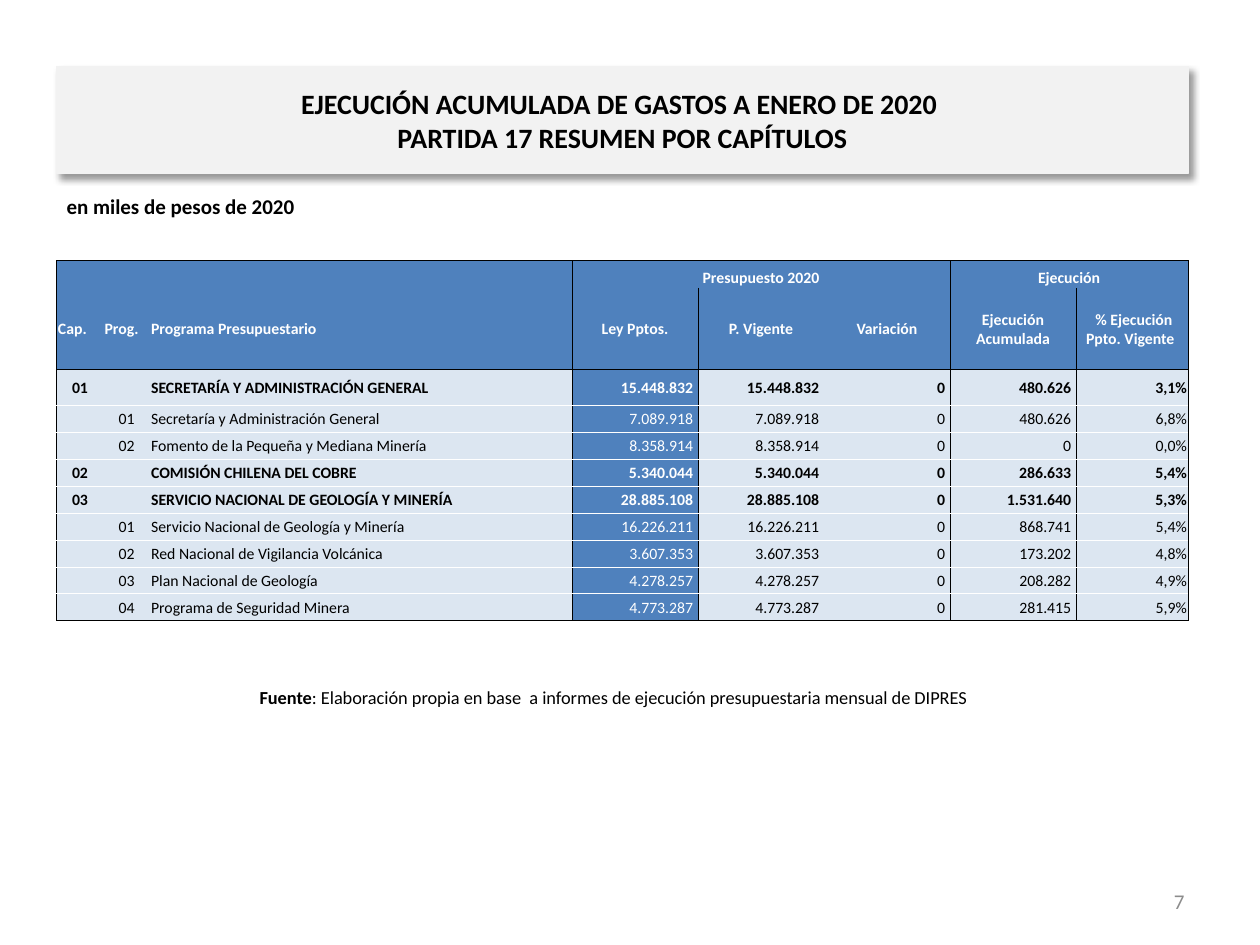
from lxml.etree import SubElement
from pptx import Presentation
from pptx.dml.color import RGBColor
from pptx.enum.text import MSO_ANCHOR as Anchor, MSO_AUTO_SIZE as AutoSize, PP_ALIGN as Align
from pptx.oxml.ns import qn
from pptx.util import Inches, Pt

COLORS = {
    "black": "000000",
    "white": "FFFFFF",
    "panel": "F2F2F2",
    "header": "4F81BD",
    "body": "DCE6F1",
    "page_number": "8C8C8C",
}
PLAIN_TABLE = "{2D5ABB26-0587-4C30-8999-92F81FD0307C}"
COLUMN_WIDTHS = [0.37, 0.37, 3.35, 1, 1, 1, 1, 0.89]
TABLE_HEIGHT, LABEL_HEIGHT, FIRST_HEIGHT = 2.86, 0.65, 0.28
GROUP_STARTS, GROUP_ENDS = (0, 3, 6), (2, 5, 7)
SPANS = {(0, 3): 3, (0, 6): 2}
HEADER = [
    ["", "", "", "Presupuesto 2020", "", "", "Ejecución", ""],
    ["Cap.", "Prog.", "Programa Presupuestario", "Ley Pptos.", "P. Vigente",
     "Variación", "Ejecución Acumulada", " % Ejecución Ppto. Vigente "],
]
PROGRAMS = [
    ("01", "", "SECRETARÍA Y ADMINISTRACIÓN GENERAL", "15.448.832", "480.626", "3,1%"),
    ("", "01", "Secretaría y Administración General", "7.089.918", "480.626", "6,8%"),
    ("", "02", "Fomento de la Pequeña y Mediana Minería", "8.358.914", "0", "0,0%"),
    ("02", "", "COMISIÓN CHILENA DEL COBRE", "5.340.044", "286.633", "5,4%"),
    ("03", "", "SERVICIO NACIONAL DE GEOLOGÍA Y MINERÍA", "28.885.108", "1.531.640", "5,3%"),
    ("", "01", "Servicio Nacional de Geología y Minería", "16.226.211", "868.741", "5,4%"),
    ("", "02", "Red Nacional de Vigilancia Volcánica", "3.607.353", "173.202", "4,8%"),
    ("", "03", "Plan Nacional de Geología", "4.278.257", "208.282", "4,9%"),
    ("", "04", "Programa de Seguridad Minera", "4.773.287", "281.415", "5,9%"),
]


def rgb(name):
    return RGBColor.from_string(COLORS[name])


def apply(target, values):
    for name, value in values.items():
        setattr(target, name, value)


def format_span(span, size, color="black", bold=False):
    apply(span.font, {"name": "Calibri", "size": Pt(size), "bold": bold})
    span.font.color.rgb = rgb(color)


def place(shape, left, top, width, height):
    apply(shape, {"left": Inches(left), "top": Inches(top),
                  "width": Inches(width), "height": Inches(height)})


def add_shadow(shape):
    effects = SubElement(shape._element.spPr, qn("a:effectLst"))
    shadow = SubElement(effects, qn("a:outerShdw"), blurRad=str(Pt(4)),
                        dist=str(Pt(3)), dir="2700000", algn="tl", rotWithShape="0")
    color = SubElement(shadow, qn("a:srgbClr"), val=COLORS["black"])
    SubElement(color, qn("a:alpha"), val="40000")


def format_title(page, text):
    title = page.shapes.title
    place(title, 0.45, 0.53, 8.98, 0.85)
    title.fill.solid()
    title.fill.fore_color.rgb = rgb("panel")
    title.line.color.rgb = rgb("panel")
    title.line.width = Pt(0.75)
    add_shadow(title)
    frame = title.text_frame
    apply(frame, {"word_wrap": True, "auto_size": AutoSize.NONE,
                  "vertical_anchor": Anchor.MIDDLE})
    para = frame.paragraphs[0]
    apply(para, {"text": text, "alignment": Align.CENTER})
    for span in para.runs:
        format_span(span, 16, bold=True)


def add_text(page, position, spans, size, align=Align.LEFT, color="black", anchor=Anchor.TOP):
    box = page.shapes.add_textbox(*map(Inches, position))
    apply(box.text_frame, {"word_wrap": True, "vertical_anchor": anchor})
    para = box.text_frame.paragraphs[0]
    para.alignment = align
    for text, bold in spans:
        span = para.add_run()
        span.text = text
        format_span(span, size, color, bold)


def cell_borders(row, column, last_row):
    end = column + SPANS.get((row, column), 1) - 1
    borders = {}
    if column in GROUP_STARTS:
        borders["lnL"] = "black"
    if end in GROUP_ENDS:
        borders["lnR"] = "black"
    if row != 1:
        borders["lnT"] = "black" if row in (0, 2) else "white"
    if row != 0:
        borders["lnB"] = "black" if row in (1, last_row) else "white"
    return borders


def add_borders(cell, borders):
    properties = cell._tc.get_or_add_tcPr()
    for tag, color in borders.items():
        line = SubElement(properties, qn("a:" + tag), w=str(Pt(0.5)))
        fill = SubElement(line, qn("a:solidFill"))
        SubElement(fill, qn("a:srgbClr"), val=COLORS[color])


def cell_alignment(row, column):
    if row < 2:
        return Align.LEFT if column < 3 else Align.CENTER
    if column < 2:
        return Align.CENTER
    return Align.JUSTIFY if column == 2 else Align.RIGHT


def fill_cell(cell, text, row, column, bold, last_row):
    add_borders(cell, cell_borders(row, column, last_row))
    dark = row < 2 or column == 3
    cell.fill.solid()
    cell.fill.fore_color.rgb = rgb("header" if dark else "body")
    apply(cell, {"margin_left": Inches(0.01), "margin_right": Inches(0.01),
                 "margin_top": Inches(0.01), "margin_bottom": 0,
                 "vertical_anchor": Anchor.BOTTOM if row == 0 else Anchor.MIDDLE})
    para = cell.text_frame.paragraphs[0]
    para.alignment = cell_alignment(row, column)
    if text:
        span = para.add_run()
        span.text = text
        format_span(span, 9, "white" if dark else "black", bold)
    else:
        SubElement(para._p, qn("a:endParaRPr"), sz="900")


def program_row(chapter, program, name, budget, spent, share):
    return [chapter, program, name, f"{budget} ", f"{budget} ", "0 ", f"{spent} ", share]


def add_budget_table(page):
    rows = HEADER + [program_row(*program) for program in PROGRAMS]
    frame = page.shapes.add_table(len(rows), len(COLUMN_WIDTHS), Inches(0.45), Inches(2.07),
                                  Inches(sum(COLUMN_WIDTHS)), Inches(TABLE_HEIGHT))
    table = frame.table
    apply(table, {"first_row": False, "horz_banding": False})
    table._tbl.tblPr.find(qn("a:tableStyleId")).text = PLAIN_TABLE
    for column, width in zip(table.columns, COLUMN_WIDTHS):
        column.width = Inches(width)
    regular = (TABLE_HEIGHT - LABEL_HEIGHT - FIRST_HEIGHT) / (len(rows) - 2)
    heights = {1: LABEL_HEIGHT, 2: FIRST_HEIGHT}
    for row, texts in enumerate(rows):
        table.rows[row].height = Inches(heights.get(row, regular))
        bold = row < 2 or bool(texts[0])
        for column, text in enumerate(texts):
            fill_cell(table.cell(row, column), text, row, column, bold, len(rows) - 1)
    for (row, column), count in SPANS.items():
        table.cell(row, column).merge(table.cell(row, column + count - 1))


def main():
    deck = Presentation()
    apply(deck, {"slide_width": Inches(10), "slide_height": Inches(7.5)})
    page = deck.slides.add_slide(deck.slide_layouts[5])
    format_title(page, "EJECUCIÓN ACUMULADA DE GASTOS A ENERO DE 2020 \v"
                       "PARTIDA 17 RESUMEN POR CAPÍTULOS")
    add_text(page, (0.43, 1.49, 8.25, 0.37), [("en miles de pesos de 2020", True)], 12)
    add_budget_table(page)
    source = [("Fuente", True),
              (": Elaboración propia en base  a informes de ejecución "
               "presupuestaria mensual de DIPRES", False)]
    add_text(page, (0.45, 5.4, 8.84, 0.4), source, 10.5, Align.CENTER)
    add_text(page, (7.17, 6.95, 2.33, 0.4), [("7", False)], 12, Align.RIGHT,
             "page_number", Anchor.MIDDLE)
    deck.save("out.pptx")


if __name__ == "__main__":
    main()
